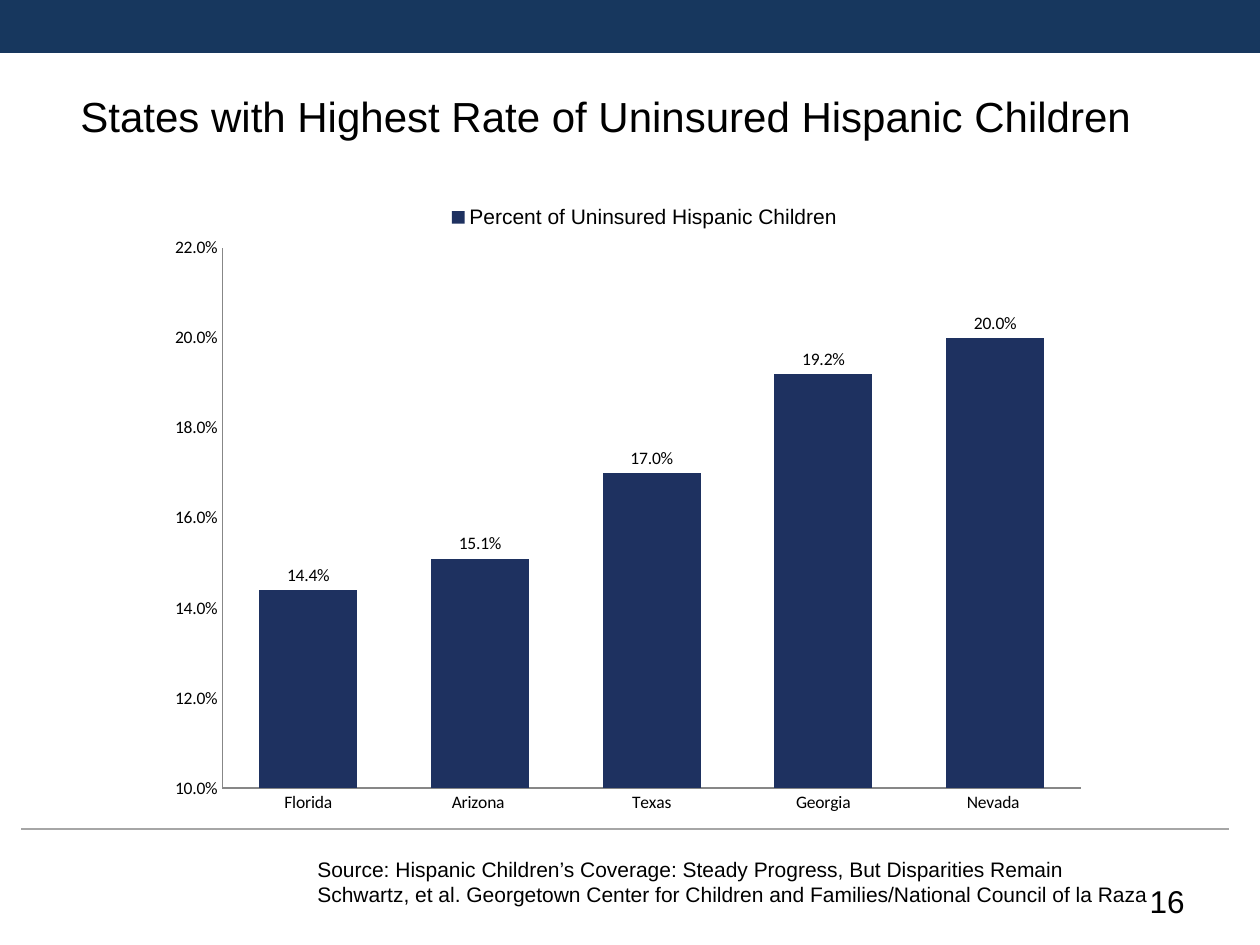
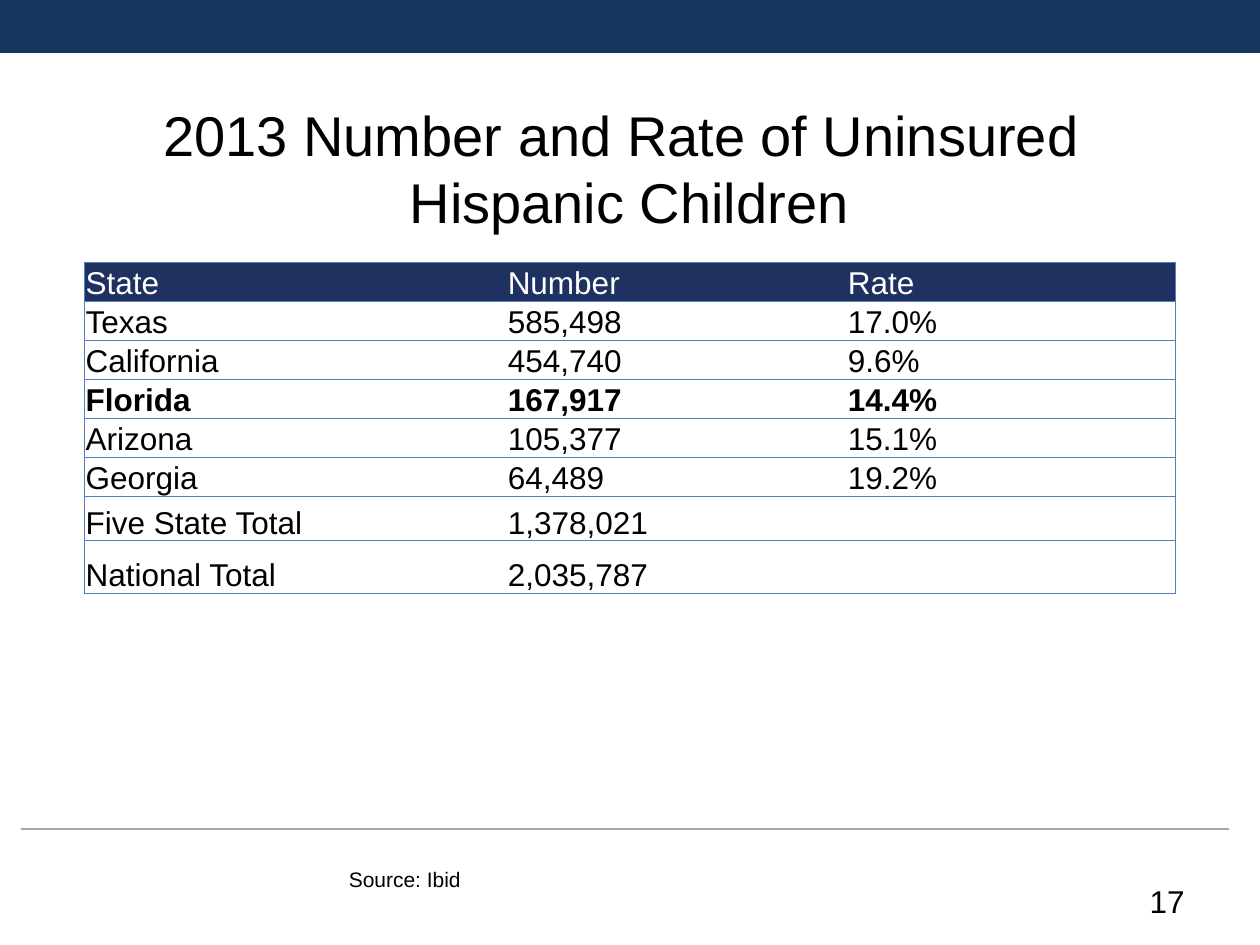
from lxml import etree
from pptx import Presentation
from pptx.chart.data import CategoryChartData
from pptx.dml.color import RGBColor
from pptx.enum.chart import XL_CHART_TYPE, XL_LABEL_POSITION, XL_LEGEND_POSITION, XL_TICK_MARK
from pptx.enum.shapes import MSO_CONNECTOR, MSO_SHAPE
from pptx.enum.text import MSO_ANCHOR, PP_ALIGN
from pptx.oxml import parse_xml
from pptx.oxml.ns import nsdecls, qn
from pptx.util import Inches, Pt

COLUMNS = XL_CHART_TYPE.COLUMN_CLUSTERED
ABOVE_BAR = XL_LABEL_POSITION.OUTSIDE_END
LEGEND_BOTTOM = XL_LEGEND_POSITION.BOTTOM
NO_TICK = XL_TICK_MARK.NONE
STRAIGHT = MSO_CONNECTOR.STRAIGHT
RECTANGLE = MSO_SHAPE.RECTANGLE
BOTTOM = MSO_ANCHOR.BOTTOM
LEFT, CENTER, RIGHT = PP_ALIGN.LEFT, PP_ALIGN.CENTER, PP_ALIGN.RIGHT

COLORS = {
    "band": "17375E",
    "rule": "A6A6A6",
    "navy": "1E3160",
    "grid": "4F81BD",
    "axis": "878787",
    "text": "000000",
    "white": "FFFFFF",
}
PERCENT = "0.0%"
CELL_INSETS = {"margin_left": 0.01, "margin_right": 0.01, "margin_top": 0.01, "margin_bottom": 0}

UNINSURED_RATES = {"Florida": 0.144, "Arizona ": 0.151, "Texas": 0.17, "Georgia": 0.192, "Nevada ": 0.2}
UNINSURED_ROWS = [
    ("State", "Number", "Rate"),
    ("Texas", "585,498", "17.0%"),
    ("California", "454,740", "9.6%"),
    ("Florida", "167,917", "14.4%"),
    ("Arizona", "105,377", "15.1%"),
    ("Georgia", "64,489", "19.2%"),
    ("Five State Total", "1,378,021", ""),
    ("National Total", "2,035,787", ""),
]


def color(name):
    return RGBColor.from_string(COLORS[name])


class Deck:
    def __init__(self):
        self.presentation = Presentation()
        self.presentation.slide_width = Inches(10)
        self.presentation.slide_height = Inches(7.5)
        self.slide = None

    def new_slide(self, number):
        self.slide = self.presentation.slides.add_slide(self.presentation.slide_layouts[6])
        self.band(0, 0, 10, 0.42)
        self.rule(0.17, 6.58, 9.75, 6.58)
        self.text([str(number)], 7.17, 6.95, 2.33, 0.4, 18, RIGHT)

    def band(self, *box):
        band = self.slide.shapes.add_shape(RECTANGLE, *map(Inches, box))
        band.shadow.inherit = False
        band.fill.solid()
        band.fill.fore_color.rgb = color("band")
        band.line.fill.background()

    def rule(self, *ends):
        rule = self.slide.shapes.add_connector(STRAIGHT, *map(Inches, ends))
        rule.line.color.rgb = color("rule")
        rule.line.width = Pt(0.75)
        etree.SubElement(rule._element.spPr, qn("a:effectLst"))

    def style(self, font, size, name="Arial", ink="text", bold=False):
        for attribute, value in {"size": Pt(size), "name": name, "bold": bold}.items():
            setattr(font, attribute, value)
        font.color.rgb = color(ink)

    def text(self, lines, left, top, width, height, size, align=LEFT):
        frame = self.slide.shapes.add_textbox(*map(Inches, (left, top, width, height))).text_frame
        frame.word_wrap = True
        for index, line in enumerate(lines):
            paragraph = frame.add_paragraph() if index else frame.paragraphs[0]
            paragraph.alignment = align
            run = paragraph.add_run()
            run.text = line
            self.style(run.font, size)

    def layout(self, parent, x, y, w, h, inner=False):
        target = '<c:layoutTarget val="inner"/>' if inner else ""
        modes = "".join(f'<c:{axis}Mode val="edge"/>' for axis in "xy")
        sizes = "".join(f'<c:{key} val="{value}"/>' for key, value in zip("xywh", (x, y, w, h)))
        for old in parent.findall(qn("c:layout")):
            parent.remove(old)
        layout = parse_xml(
            f'<c:layout {nsdecls("c")}><c:manualLayout>{target}{modes}{sizes}</c:manualLayout></c:layout>'
        )
        parent.insert(0 if inner else 1, layout)

    def column_chart(self, series_name, values, *box):
        data = CategoryChartData(number_format=PERCENT)
        data.categories = list(values)
        data.add_series(series_name, list(values.values()))
        chart = self.slide.shapes.add_chart(COLUMNS, *map(Inches, box), data).chart
        self.style(chart.font, 10, "Calibri")
        chart.has_title = False
        chart.has_legend = True
        chart.legend.position = LEGEND_BOTTOM
        chart.legend.include_in_layout = False
        self.style(chart.legend.font, 12)
        self.layout(chart.legend._element, 0.29, 0.03, 0.44, 0.06)

        plot = chart.plots[0]
        plot.gap_width = 75
        plot.vary_by_categories = False
        plot.has_data_labels = True
        label_format = {
            "show_value": True,
            "number_format": PERCENT,
            "number_format_is_linked": False,
            "position": ABOVE_BAR,
        }
        for attribute, value in label_format.items():
            setattr(plot.data_labels, attribute, value)
        bars = plot.series[0].format.fill
        bars.solid()
        bars.fore_color.rgb = color("navy")
        self.layout(chart._chartSpace.chart.plotArea, 0.068, 0.108, 0.899, 0.844, inner=True)

        for axis in (chart.category_axis, chart.value_axis):
            axis.major_tick_mark = axis.minor_tick_mark = NO_TICK
            axis.has_major_gridlines = False
            axis.format.line.color.rgb = color("axis")
            axis.format.line.width = Pt(0.75)
        scale = {"minimum_scale": 0.1, "maximum_scale": 0.22, "major_unit": 0.02}
        for attribute, value in scale.items():
            setattr(chart.value_axis, attribute, value)
        chart.value_axis.tick_labels.number_format = PERCENT
        chart.value_axis.tick_labels.number_format_is_linked = False

    def cell_borders(self, cell, visible):
        properties = cell._tc.get_or_add_tcPr()
        for side in "LRTB":
            line = etree.SubElement(properties, qn(f"a:ln{side}"), w=str(Pt(0.5)))
            if side in visible:
                fill = etree.SubElement(line, qn("a:solidFill"))
                etree.SubElement(fill, qn("a:srgbClr"), val=COLORS["grid"])
            else:
                etree.SubElement(line, qn("a:noFill"))

    def table(self, rows, widths, heights, highlighted, *box):
        table = self.slide.shapes.add_table(len(rows), len(widths), *map(Inches, box)).table
        table.first_row = table.horz_banding = False
        for column, width in zip(table.columns, widths):
            column.width = Inches(width)
        for row, height in zip(table.rows, heights):
            row.height = Inches(height)
        for r, values in enumerate(rows):
            for c, value in enumerate(values):
                cell = table.cell(r, c)
                for attribute, inset in CELL_INSETS.items():
                    setattr(cell, attribute, Inches(inset))
                cell.vertical_anchor = BOTTOM
                outer = {0: "L", len(widths) - 1: "R"}.get(c, "")
                self.cell_borders(cell, "TB" + outer)
                if r == 0:
                    cell.fill.solid()
                    cell.fill.fore_color.rgb = color("navy")
                else:
                    cell.fill.background()
                cell.text = value
                self.style(
                    cell.text_frame.paragraphs[0].font,
                    18,
                    ink="text" if r else "white",
                    bold=value != "" and values[0] == highlighted,
                )


def main():
    deck = Deck()

    deck.new_slide(16)
    deck.column_chart("Percent of Uninsured Hispanic Children", UNINSURED_RATES, 1.25, 1.42, 7.58, 5.08)
    deck.text(["States with Highest Rate of Uninsured Hispanic Children"], 0.54, 0.67, 8.92, 0.5, 24)
    deck.text(
        [
            "Source: Hispanic Children’s Coverage: Steady Progress, But Disparities Remain",
            "Schwartz, et al. Georgetown Center for Children and Families/National Council of la Raza",
        ],
        2.42, 6.75, 6.88, 0.5, 12,
    )

    deck.new_slide(17)
    deck.table(
        UNINSURED_ROWS,
        (3.35, 2.7, 2.61),
        (0.31, 0.31, 0.31, 0.31, 0.29, 0.31, 0.35, 0.42),
        "Florida",
        0.67, 2.08, 8.67, 2.65,
    )
    deck.text(
        ["2013 Number and Rate of Uninsured ", "Hispanic Children"],
        0.33, 0.75, 9.33, 1.18, 32, CENTER,
    )
    deck.text(["Source: Ibid"], 2.67, 6.83, 1.5, 0.3, 12)

    deck.presentation.save("out.pptx")


if __name__ == "__main__":
    main()
